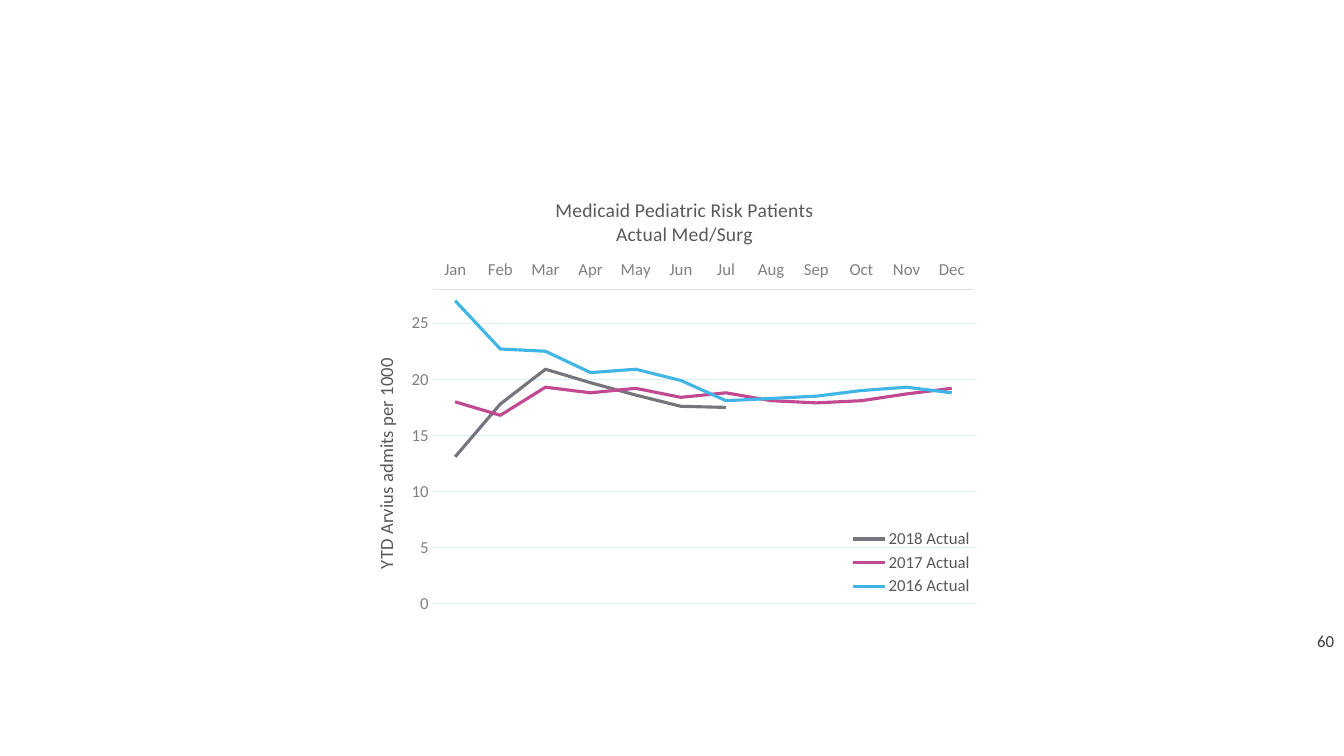
import pptx
import pptx.chart.data
import pptx.dml.color
import pptx.enum.chart
import pptx.enum.text
import pptx.oxml
import pptx.oxml.ns
import pptx.util

TITLE = "Medicaid Pediatric Risk Patients\nActual Med/Surg"
AXIS = "YTD Arvius admits per 1000"
PAGE = "60"
MONTHS = "Jan Feb Mar Apr May Jun Jul Aug Sep Oct Nov Dec".split()
ADMITS = {
    "2018 Actual": [13.1, 17.8, 20.9, 19.7, 18.6, 17.6, 17.5] + [None] * 5,
    "2017 Actual": [18, 16.8, 19.3, 18.8, 19.2, 18.4, 18.8, 18.1, 17.9, 18.1, 18.7, 19.2],
    "2016 Actual": [27, 22.7, 22.5, 20.6, 20.9, 19.9, 18.1, 18.3, 18.5, 19, 19.3, 18.8],
}
THEME = {
    "font": "Calibri", "title": 14, "axis": 13.3, "label": 12,
    "ink": "3A3A3A", "text": "595959", "months": "808080", "values": "7F7F7F",
    "rule": "E1E1E1", "grid": "D9F0FA",
    "lines": ["74767B", "C14991", "41B6E6"],
}
SCALE = 914400 / 100.8
SLIDE = (1344, 756)
CHART = (357, 176, 630, 438)
NUMBER = (1243, 621, 101, 40)
# Places within the chart, as fractions of its size
PLOT = {"x": 0.12, "y": 0.26, "w": 0.86, "h": 0.72}
LEGEND = {"x": 0.78, "y": 0.8, "w": 0.2, "h": 0.17}
HEAD = {"x": 0.31, "y": 0.04}
SIDE = {"x": 0.02, "y": 0.41}


def emu(lengths):
    return [round(n * SCALE) for n in lengths]


def rgb(name):
    return pptx.dml.color.RGBColor.from_string(name)


def style(font, size, color):
    font.name = THEME["font"]
    font.size = pptx.util.Pt(size)
    font.bold = False
    font.color.rgb = rgb(color)


def stroke(line, color, width):
    line.color.rgb = rgb(color)
    line.width = pptx.util.Pt(width)


def place(node, index, inner=False, **box):
    """Give a chart part a manual layout, as child number index."""
    for old in node.findall(pptx.oxml.ns.qn("c:layout")):
        node.remove(old)
    marks = '<c:layoutTarget val="inner"/>' if inner else ""
    marks += "".join(f'<c:{k}Mode val="edge"/>' for k in "xy")
    marks += "".join(f'<c:{k} val="{v}"/>' for k, v in box.items())
    node.insert(index, pptx.oxml.parse_xml(
        f'<c:layout {pptx.oxml.ns.nsdecls("c")}>'
        f"<c:manualLayout>{marks}</c:manualLayout></c:layout>"))


def caption(title, words, size, box):
    frame = title.text_frame
    frame.text = words
    for para in frame.paragraphs:
        for run in para.runs:
            style(run.font, size, THEME["text"])
    place(title._element, 1, **box)


def draw(slide):
    kinds = pptx.enum.chart
    data = pptx.chart.data.CategoryChartData(number_format="0.0")
    data.categories = MONTHS
    for name, values in ADMITS.items():
        data.add_series(name, values)
    chart = slide.shapes.add_chart(
        kinds.XL_CHART_TYPE.LINE, *emu(CHART), data).chart
    style(chart.font, 10, THEME["ink"])
    chart.has_title = True
    caption(chart.chart_title, TITLE, THEME["title"], HEAD)
    place(chart._chartSpace.chart.plotArea, 0, inner=True, **PLOT)

    chart.plots[0].vary_by_categories = False
    for series, color in zip(chart.plots[0].series, THEME["lines"]):
        series.smooth = False
        series.marker.style = kinds.XL_MARKER_STYLE.NONE
        stroke(series.format.line, color, 2.25)

    months, values = chart.category_axis, chart.value_axis
    for axis, color in ((months, "months"), (values, "values")):
        axis.major_tick_mark = kinds.XL_TICK_MARK.NONE
        axis.minor_tick_mark = kinds.XL_TICK_MARK.NONE
        style(axis.tick_labels.font, THEME["label"], THEME[color])
    months.tick_label_position = kinds.XL_TICK_LABEL_POSITION.HIGH
    stroke(months.format.line, THEME["rule"], 0.75)

    values.minimum_scale, values.maximum_scale, values.major_unit = 0, 28, 5
    values.crosses = kinds.XL_AXIS_CROSSES.MAXIMUM
    values.tick_labels.number_format = "0"
    values.tick_labels.number_format_is_linked = False
    values.format.line.fill.background()
    stroke(values.major_gridlines.format.line, THEME["grid"], 0.75)
    caption(values.axis_title, AXIS, THEME["axis"], SIDE)
    values.axis_title.text_frame._txBody.bodyPr.set("rot", "-5400000")
    values.axis_title.text_frame._txBody.bodyPr.set("vert", "horz")

    chart.has_legend = True
    legend = chart.legend
    legend.position = kinds.XL_LEGEND_POSITION.BOTTOM
    legend.include_in_layout = False
    style(legend.font, THEME["label"], THEME["text"])
    place(legend._element, 1, **LEGEND)


def main():
    deck = pptx.Presentation()
    deck.slide_width, deck.slide_height = emu(SLIDE)
    slide = deck.slides.add_slide(deck.slide_layouts[6])
    frame = slide.shapes.add_textbox(*emu(NUMBER)).text_frame
    frame.word_wrap = True
    frame.vertical_anchor = pptx.enum.text.MSO_ANCHOR.MIDDLE
    frame.text = PAGE
    para = frame.paragraphs[0]
    para.alignment = pptx.enum.text.PP_ALIGN.RIGHT
    style(para.runs[0].font, THEME["label"], THEME["ink"])
    draw(slide)
    deck.save("out.pptx")


if __name__ == "__main__":
    main()
